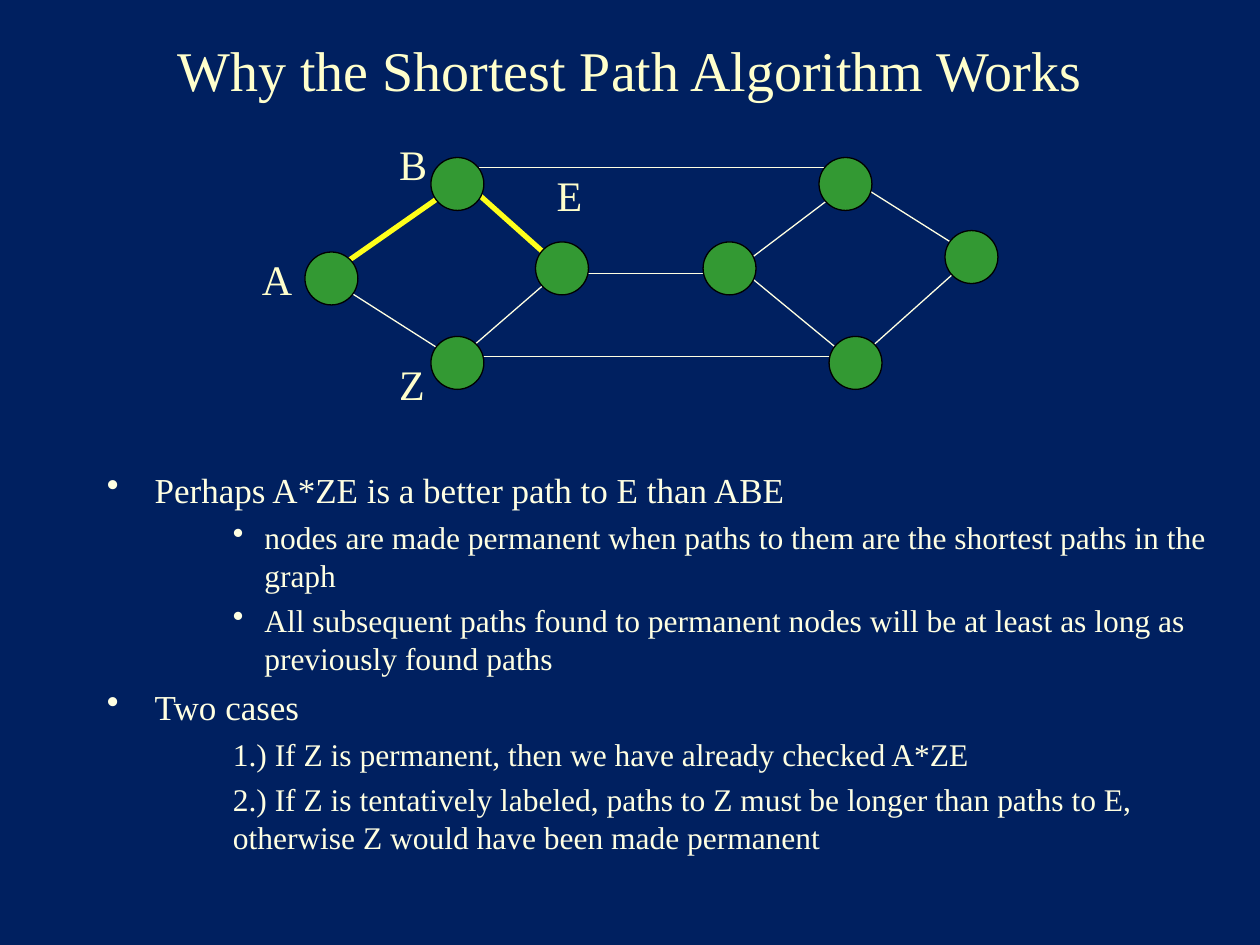
from lxml.etree import SubElement
from pptx import Presentation
from pptx.dml.color import RGBColor
from pptx.enum.shapes import MSO_CONNECTOR, MSO_SHAPE
from pptx.enum.text import MSO_ANCHOR, PP_ALIGN
from pptx.oxml.ns import qn
from pptx.util import Inches, Pt

NAVY = RGBColor(0x00, 0x20, 0x60)
CREAM = RGBColor(0xFF, 0xFF, 0xCC)
IVORY = RGBColor(0xFF, 0xFF, 0xE2)
YELLOW = RGBColor(0xFF, 0xFF, 0x1A)
GREEN = RGBColor(0x33, 0x99, 0x33)
BLACK = RGBColor(0x00, 0x00, 0x00)

TITLE = "Why the Shortest Path Algorithm Works"

# Text, level, size, left margin, first-line indent, bulleted
ARGUMENT = [
    ("Perhaps A*ZE is a better path to E than ABE", 0, 20, 0.38, -0.38, True),
    ("nodes are made permanent when paths to them are the shortest paths in the graph",
     2, 18, 1.25, -0.25, True),
    ("All subsequent paths found to permanent nodes will be at least as long as "
     "previously found paths", 2, 18, 1.25, -0.25, True),
    ("Two cases", 0, 20, 0.38, -0.38, True),
    ("1.) If Z is permanent, then we have already checked A*ZE", 2, 18, 1, 0, False),
    ("2.) If Z is tentatively labeled, paths to Z must be longer than paths to E, "
     "otherwise Z would have been made permanent", 2, 18, 1, 0, False),
]

SHORTEST_PATH = [
    ((2.75, 2.08), (3.58, 1.5)),
    ((3.75, 1.5), (4.5, 2.17)),
]
EDGES = [
    ((2.67, 2.25), (3.58, 2.83)),
    ((3.75, 2.75), (4.42, 2.17)),
    ((3.75, 2.83), (6.83, 2.83)),
    ((4.58, 2.17), (5.75, 2.17)),
    ((3.75, 1.33), (6.67, 1.33)),
    ((5.92, 2.08), (6.58, 1.58)),
    ((5.92, 2.17), (6.83, 2.92)),
    ((6.83, 2.83), (7.67, 2.08)),
    ((6.75, 1.42), (7.67, 2)),
]
NODES = [(2.42, 2), (3.42, 2.67), (6.5, 1.25), (5.58, 1.92),
         (4.25, 1.92), (3.42, 1.25), (7.5, 1.83), (6.58, 2.67)]
NODE_SIZE = 0.42
NODE_LABELS = [("A", 1.98, 1.96, 0.44), ("B", 3.07, 1.05, 0.42),
               ("E", 4.32, 1.3, 0.4), ("Z", 3.07, 2.8, 0.4)]


def write(paragraph, text, size, color=CREAM, align=PP_ALIGN.LEFT, level=0,
          margin=0, indent=0, bullet=False, space_before=0):
    paragraph.alignment = align
    paragraph.level = level
    paragraph.space_before = Pt(space_before)
    run = paragraph.add_run()
    run.text = text
    run.font.name = "Times New Roman"
    run.font.size = Pt(size)
    run.font.color.rgb = color
    properties = paragraph._p.get_or_add_pPr()
    properties.set("marL", str(Inches(margin)))
    properties.set("indent", str(Inches(indent)))
    if bullet:
        SubElement(properties, qn("a:buChar")).set("char", "•")


class GraphSlide:
    def __init__(self, presentation):
        self.slide = presentation.slides.add_slide(presentation.slide_layouts[5])
        self.shapes = self.slide.shapes
        background = self.slide.background.fill
        background.solid()
        background.fore_color.rgb = NAVY

    def title(self, text):
        heading = self.shapes.title
        heading.left, heading.top = Inches(0.75), Inches(0.17)
        heading.width, heading.height = Inches(8.5), Inches(0.75)
        heading.text_frame.vertical_anchor = MSO_ANCHOR.MIDDLE
        write(heading.text_frame.paragraphs[0], text, 32, align=PP_ALIGN.CENTER)

    def text_frame(self, left, top, width, height, wrap):
        box = self.shapes.add_textbox(Inches(left), Inches(top),
                                      Inches(width), Inches(height))
        box.text_frame.word_wrap = wrap
        return box.text_frame

    def outline(self, items, left, top, width, height):
        """Write the bulleted argument, each item at its own level."""
        frame = self.text_frame(left, top, width, height, wrap=True)
        for number, (text, level, size, margin, indent, bullet) in enumerate(items):
            paragraph = frame.add_paragraph() if number else frame.paragraphs[0]
            write(paragraph, text, size, color=IVORY, level=level, margin=margin,
                  indent=indent, bullet=bullet, space_before=size * 0.24)

    def label(self, text, left, top, width):
        frame = self.text_frame(left, top, width, 0.5, wrap=False)
        write(frame.paragraphs[0], text, 24)

    def edge(self, start, end, color=IVORY, weight=0.75):
        line = self.shapes.add_connector(MSO_CONNECTOR.STRAIGHT,
                                         *map(Inches, start + end))
        line.line.color.rgb = color
        line.line.width = Pt(weight)
        SubElement(line._element.spPr, qn("a:effectLst"))

    def node(self, left, top):
        circle = self.shapes.add_shape(MSO_SHAPE.OVAL, Inches(left), Inches(top),
                                       Inches(NODE_SIZE), Inches(NODE_SIZE))
        circle.shadow.inherit = False
        circle.fill.solid()
        circle.fill.fore_color.rgb = GREEN
        circle.line.color.rgb = BLACK
        circle.line.width = Pt(0.75)


def main():
    presentation = Presentation()
    presentation.slide_width, presentation.slide_height = Inches(10), Inches(7.5)
    graph = GraphSlide(presentation)
    graph.title(TITLE)
    graph.outline(ARGUMENT, 0.75, 3.67, 9, 3.42)
    for start, end in SHORTEST_PATH:
        graph.edge(start, end, color=YELLOW, weight=3)
    for start, end in EDGES:
        graph.edge(start, end)
    for left, top in NODES:
        graph.node(left, top)
    for text, left, top, width in NODE_LABELS:
        graph.label(text, left, top, width)
    presentation.save("out.pptx")


if __name__ == "__main__":
    main()
